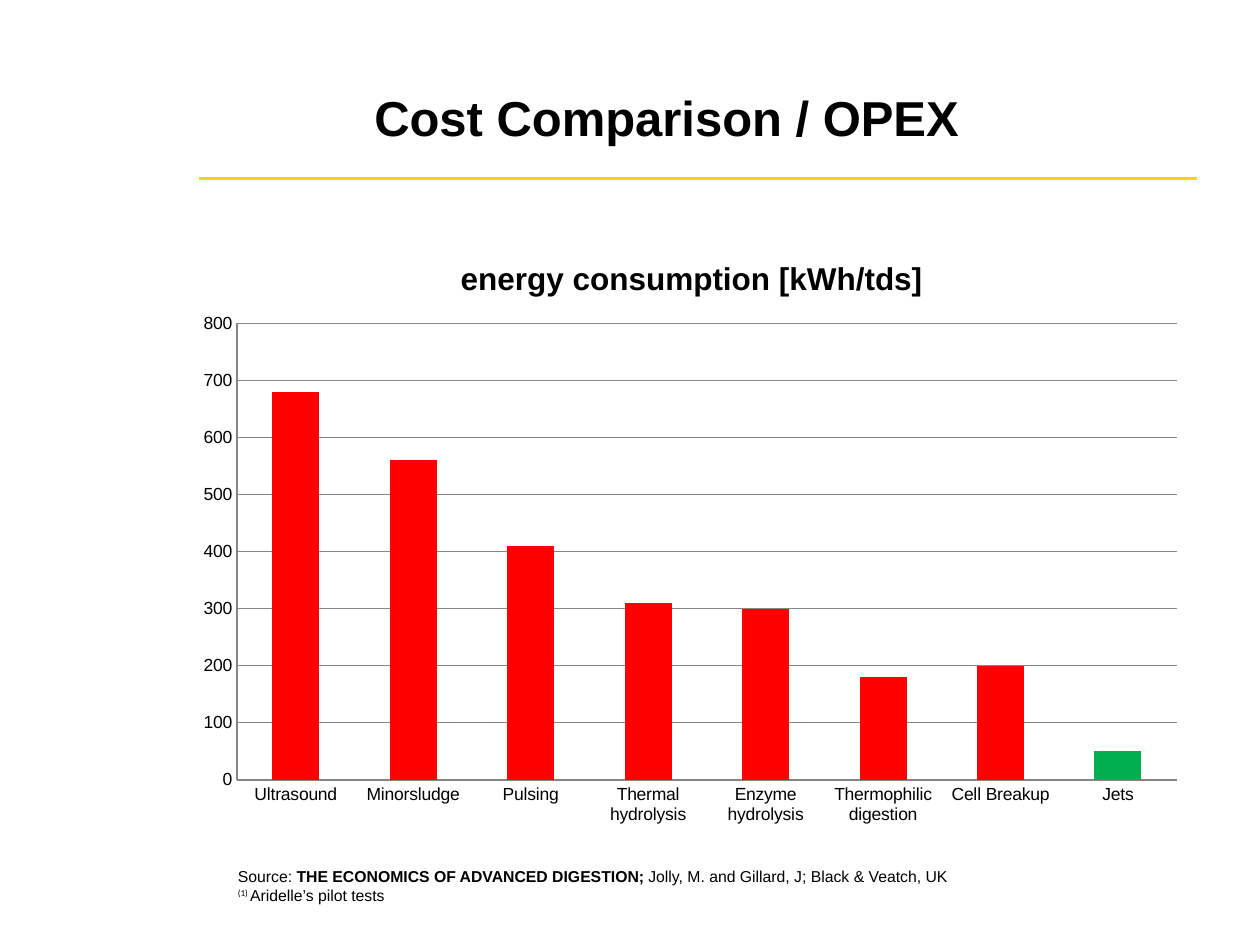
import pptx
import pptx.chart.data
import pptx.dml.color
import pptx.enum.chart
import pptx.enum.shapes
import pptx.enum.text
import pptx.oxml
import pptx.oxml.ns
import pptx.util
from pptx.util import Inches

BLACK = pptx.dml.color.RGBColor(0x00, 0x00, 0x00)
YELLOW = pptx.dml.color.RGBColor(0xFF, 0xD2, 0x15)
RED = pptx.dml.color.RGBColor(0xFF, 0x00, 0x00)
GREEN = pptx.dml.color.RGBColor(0x00, 0xB0, 0x50)
GRAY = pptx.dml.color.RGBColor(0x86, 0x86, 0x86)


def style_font(font, size, bold=False, name="Arial"):
    font.name = name
    font.size = pptx.util.Pt(size)
    font.bold = bold
    font.color.rgb = BLACK


deck = pptx.Presentation()
deck.slide_width = Inches(10)
deck.slide_height = Inches(7.5)
page = deck.slides.add_slide(deck.slide_layouts[5])

title = page.shapes.title
title.left, title.top = Inches(1.08), Inches(0.3)
title.width, title.height = Inches(8.42), Inches(1.25)
title.text_frame.vertical_anchor = pptx.enum.text.MSO_ANCHOR.MIDDLE
para = title.text_frame.paragraphs[0]
para.alignment = pptx.enum.text.PP_ALIGN.CENTER
span = para.add_run()
span.text = "Cost Comparison / OPEX"
style_font(span.font, 28, True)

rule = page.shapes.add_connector(
    pptx.enum.shapes.MSO_CONNECTOR.STRAIGHT,
    Inches(1.58), Inches(1.42), Inches(9.5), Inches(1.42))
rule.line.color.rgb = YELLOW
rule.line.width = pptx.util.Pt(1.75)
rule._element.spPr.append(pptx.oxml.parse_xml(
    f"<a:effectLst {pptx.oxml.ns.nsdecls('a')}/>"))

source_box = page.shapes.add_textbox(Inches(1.79), Inches(6.83), Inches(6.31), Inches(0.4))
frame = source_box.text_frame
frame.word_wrap = True
frame.auto_size = pptx.enum.text.MSO_AUTO_SIZE.SHAPE_TO_FIT_TEXT
source_lines = [
    [("Source: ", False, "Arial", 0),
     ("THE ECONOMICS OF ADVANCED DIGESTION; ", True, "Arial", 0),
     ("Jolly, M. and Gillard, J; Black & Veatch, UK", False, "Arial", 0)],
    [("(1) ", False, "Calibri", 30000),
     ("Aridelle’s pilot tests", False, "Arial", 0)],
]
for index, line in enumerate(source_lines):
    para = frame.add_paragraph() if index else frame.paragraphs[0]
    for text, bold, name, baseline in line:
        span = para.add_run()
        span.text = text
        style_font(span.font, 9, bold, name)
        if baseline:
            span._r.get_or_add_rPr().set("baseline", str(baseline))

energy = pptx.chart.data.CategoryChartData()
energy.categories = [
    "Ultrasound", "Minorsludge", "Pulsing", "Thermal hydrolysis",
    "Enzyme hydrolysis", "Thermophilic digestion", "Cell Breakup", "Jets"]
energy.add_series("Series 1", [680, 560, 410, 310, 300, 180, 200, 50])
chart = page.shapes.add_chart(
    pptx.enum.chart.XL_CHART_TYPE.COLUMN_CLUSTERED,
    Inches(1.48), Inches(1.85), Inches(8.02), Inches(4.77), energy).chart
style_font(chart.font, 10)
chart.has_legend = False
chart.has_title = True
span = chart.chart_title.text_frame.paragraphs[0].add_run()
span.text = "energy consumption [kWh/tds]"
style_font(span.font, 18, True)
chart.chart_title.include_in_layout = False

plot = chart.plots[0]
plot.gap_width = 150
plot.vary_by_categories = False
bars = plot.series[0]
bars.invert_if_negative = False
bars.format.fill.solid()
bars.format.fill.fore_color.rgb = RED
highlight = bars.points[7].format.fill
highlight.solid()
highlight.fore_color.rgb = GREEN

value_axis = chart.value_axis
value_axis.minimum_scale = 0
value_axis.maximum_scale = 800
value_axis.major_unit = 100
value_axis.has_major_gridlines = True
value_axis.major_gridlines.format.line.color.rgb = GRAY
for axis in (chart.category_axis, value_axis):
    axis.major_tick_mark = pptx.enum.chart.XL_TICK_MARK.NONE
    axis.minor_tick_mark = pptx.enum.chart.XL_TICK_MARK.NONE
    axis.format.line.color.rgb = GRAY

plot_area = chart._chartSpace.chart.plotArea
for old_layout in plot_area.findall(pptx.oxml.ns.qn("c:layout")):
    plot_area.remove(old_layout)
plot_area.insert(0, pptx.oxml.parse_xml(
    f"<c:layout {pptx.oxml.ns.nsdecls('c')}><c:manualLayout>"
    '<c:layoutTarget val="inner"/><c:xMode val="edge"/><c:yMode val="edge"/>'
    '<c:x val="0.05"/><c:y val="0.15"/><c:w val="0.93"/><c:h val="0.76"/>'
    "</c:manualLayout></c:layout>"))

deck.save("out.pptx")
